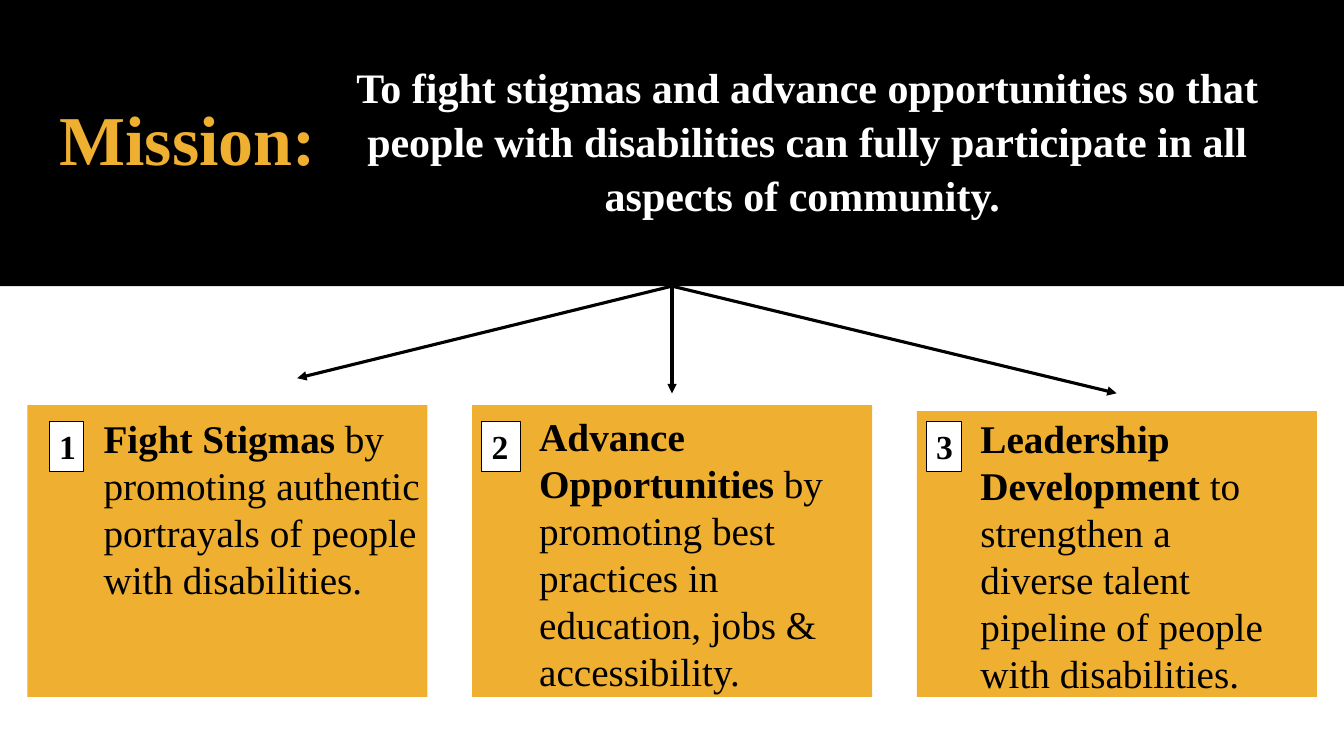
from lxml import etree
from pptx import Presentation
from pptx import util as u
from pptx.dml.color import RGBColor
from pptx.enum import shapes, text
from pptx.oxml.ns import qn

WIDTH, HEIGHT = 33.87, 19.05
BAND = 7.21
GOLD, BLACK, WHITE = "EFAF30", "000000", "FFFFFF"


def color(code):
    return RGBColor.from_string(code)


class Slide:
    font = "Times New Roman"

    def __init__(self, deck):
        self.page = deck.slides.add_slide(deck.slide_layouts[6])

    def rect(self, x, y, w, h, fill, line=None):
        box = self.page.shapes.add_shape(
            shapes.MSO_SHAPE.RECTANGLE, u.Cm(x), u.Cm(y), u.Cm(w), u.Cm(h))
        box.shadow.inherit = False
        box.fill.solid()
        box.fill.fore_color.rgb = color(fill)
        if line:
            box.line.color.rgb = color(line)
            box.line.width = u.Pt(0.75)
        else:
            box.line.fill.background()
        return box

    def letter(self, box, parts, size, ink=BLACK, title=False):
        """Fill a box with (words, bold) parts; a title is centred and spaced."""
        frame = box.text_frame
        frame.word_wrap = True
        frame.auto_size = text.MSO_AUTO_SIZE.SHAPE_TO_FIT_TEXT
        frame.vertical_anchor = text.MSO_ANCHOR.TOP
        para = frame.paragraphs[0]
        para.alignment = text.PP_ALIGN.CENTER if title else text.PP_ALIGN.LEFT
        if title:
            para.line_spacing = 1.07
            para.space_after = u.Pt(8)
        for words, bold in parts:
            run = para.add_run()
            run.text = words
            run.font.name = self.font
            run.font.size = u.Pt(size)
            run.font.bold = bold
            run.font.color.rgb = color(ink)

    def label(self, x, y, w, h, parts, size, **look):
        box = self.page.shapes.add_textbox(u.Cm(x), u.Cm(y), u.Cm(w), u.Cm(h))
        self.letter(box, parts, size, **look)
        return box

    def badge(self, x, w, digit):
        box = self.rect(x, 10.62, w, 1.27, WHITE, BLACK)
        self.letter(box, [(digit, True)], 24)

    def arrow(self, start, x, y):
        """Draw an arrow from the bottom middle of a shape to a point."""
        line = self.page.shapes.add_connector(
            shapes.MSO_CONNECTOR.STRAIGHT,
            u.Cm(WIDTH / 2), u.Cm(BAND), u.Cm(x), u.Cm(y))
        line.begin_connect(start, 2)
        line.line.color.rgb = color(BLACK)
        line.line.width = u.Pt(2.25)
        props = line._element.spPr
        etree.SubElement(props.find(qn("a:ln")), qn("a:tailEnd"), type="triangle")
        etree.SubElement(props, qn("a:effectLst"))


def main():
    deck = Presentation()
    deck.slide_width, deck.slide_height = u.Cm(WIDTH), u.Cm(HEIGHT)
    slide = Slide(deck)

    band = slide.rect(0, 0, WIDTH, BAND, BLACK)
    slide.label(-1.6, 2.13, 12.67, 2.39, [("Mission:", True)], 50,
                ink=GOLD, title=True)
    mission = slide.label(
        8, 1.35, 24.71, 4.29,
        [("To fight stigmas and advance opportunities so that people with "
          "disabilities can fully participate in all aspects of community. ", True)],
        30, ink=WHITE, title=True)
    mission.text_frame.vertical_anchor = text.MSO_ANCHOR.MIDDLE

    # card top, badge (left, width), words (left, top, width, height), arrow tip
    goals = [
        (10.21, (1.24, 0.86), (2.36, 10.31, 8.74, 5.05), (7.49, 9.53),
         "Fight Stigmas ",
         "by promoting authentic portrayals of people with disabilities."),
        (10.21, (12.14, 0.97), (13.34, 10.26, 8.92, 7.44), (WIDTH / 2, 9.91),
         "Advance Opportunities ",
         "by promoting best practices in education, jobs & accessibility."),
        (10.36, (23.34, 0.89), (24.46, 10.31, 8.33, 7.44), (28.14, 9.91),
         "Leadership Development ",
         "to strengthen a diverse talent pipeline of people with disabilities."),
    ]
    for i, (top, badge, area, tip, head, rest) in enumerate(goals):
        slide.rect(0.69 + 11.21 * i, top, 10.08, 17.56 - top, GOLD)
        slide.badge(*badge, str(i + 1))
        slide.label(*area, [(head, True), (rest, False)], 28)
        slide.arrow(band, *tip)

    deck.save("out.pptx")


if __name__ == "__main__":
    main()
